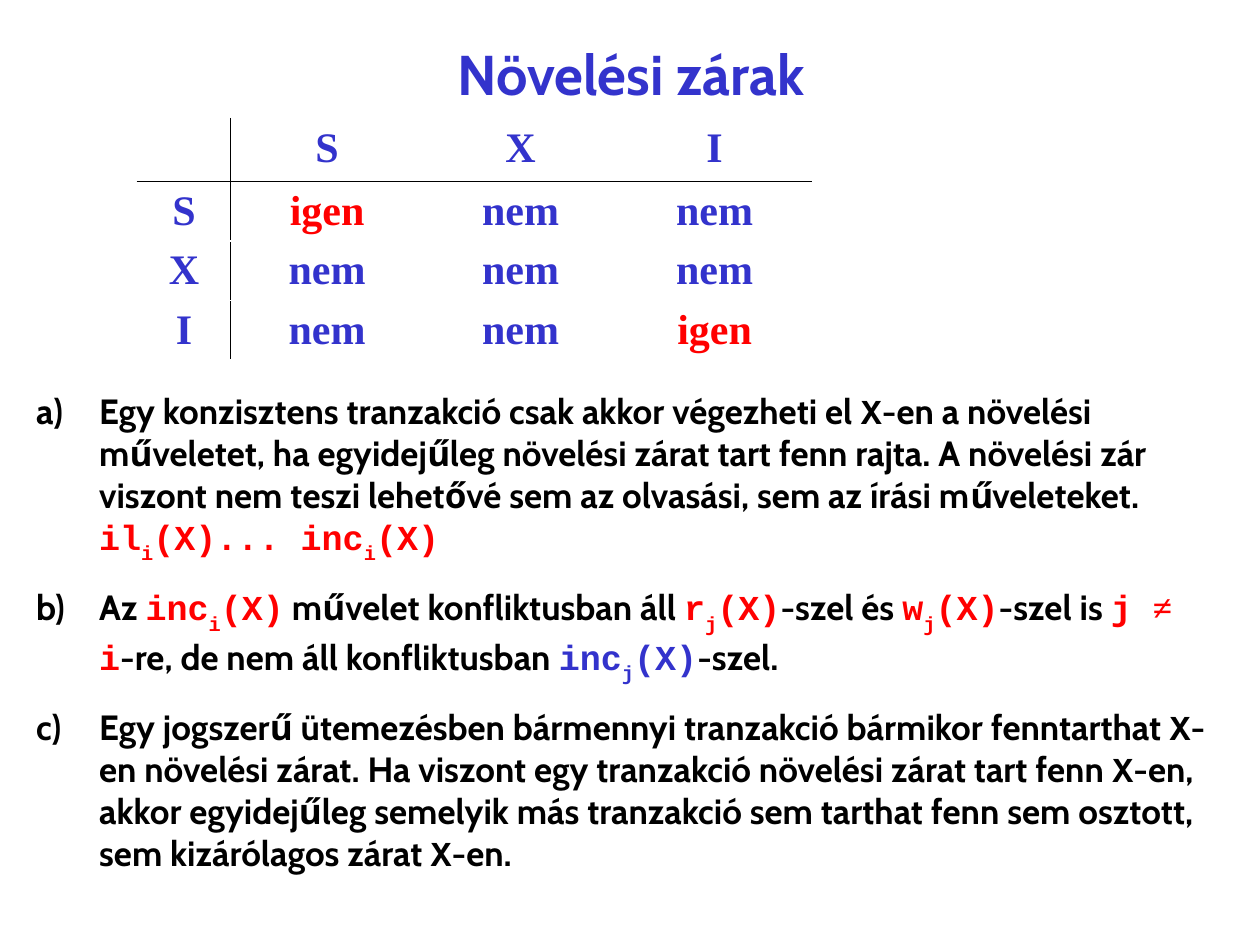
"""Build the slide on increment locks: a lock table and three rules."""
from lxml.etree import SubElement
from pptx import Presentation
from pptx.dml.color import RGBColor
from pptx.enum.text import MSO_ANCHOR, PP_ALIGN
from pptx.oxml.ns import qn
from pptx.util import Cm, Pt

BLUE, RED, BLACK = "3333CC", "FF0000", "000000"
SANS, MONO, SERIF = "Cabin", "Courier New", "Times New Roman"

TITLE = "Növelési zárak"
GRID = [
    ["", "S", "X", "I"],
    ["S", "igen", "nem", "nem"],
    ["X", "nem", "nem", "nem"],
    ["I", "nem", "nem", "igen"],
]
COLS = [1.88, 3.89, 3.91, 3.91]
ROWS = [1.27, 1.19, 1.19, 1.19]

LOOKS = {
    "text": (SANS, BLACK, 0),
    "item": (MONO, BLACK, 0),
    "code": (MONO, RED, 0),
    "sub": (MONO, RED, -30),
    "sign": (SERIF, RED, 0),
    "good": (MONO, BLUE, 0),
    "goodsub": (MONO, BLUE, -30),
}
RULES = [
    [
        ("text", "Egy konzisztens tranzakció csak akkor végezheti el "),
        ("item", "X"),
        ("text", "-en a növelési műveletet, ha egyidejűleg növelési zárat tart "
                 "fenn rajta. A növelési zár viszont nem teszi lehetővé sem az "
                 "olvasási, sem az írási műveleteket. "),
        ("code", "il"), ("sub", "i"), ("code", "(X)... inc"),
        ("sub", "i"), ("code", "(X)"),
    ],
    [
        ("text", "Az "),
        ("code", "inc"), ("sub", "i"), ("code", "(X)"),
        ("text", " művelet konfliktusban áll "),
        ("code", "r"), ("sub", "j"), ("code", "(X)"),
        ("text", "-szel és "),
        ("code", "w"), ("sub", "j"), ("code", "(X)"),
        ("text", "-szel is "),
        ("code", "j "), ("sign", "≠ "), ("code", "i"),
        ("text", "-re, de nem áll konfliktusban "),
        ("good", "inc"), ("goodsub", "j"), ("good", "(X)"),
        ("text", "-szel."),
    ],
    [
        ("text", "Egy jogszerű ütemezésben bármennyi tranzakció bármikor "
                 "fenntarthat "),
        ("item", "X"),
        ("text", "-en növelési zárat. Ha viszont egy tranzakció növelési zárat "
                 "tart fenn "),
        ("item", "X"),
        ("text", "-en, akkor egyidejűleg semelyik más tranzakció sem tarthat "
                 "fenn sem osztott, sem kizárólagos zárat "),
        ("item", "X"),
        ("text", "-en."),
    ],
]


def put(item, vals):
    for name, val in vals.items():
        setattr(item, name, val)


def tint(font, code):
    font.color.rgb = RGBColor.from_string(code)


def add_run(para, text, face, size, code, base=0):
    run = para.add_run()
    run.text = text
    put(run.font, {"name": face, "size": Pt(size), "bold": True})
    tint(run.font, code)
    if base:
        run.font._element.set("baseline", str(base * 1000))


def add_box(slide, left, top, width, height, anchor):
    box = slide.shapes.add_textbox(Cm(left), Cm(top), Cm(width), Cm(height))
    put(box.text_frame, {"word_wrap": True, "vertical_anchor": anchor})
    return box.text_frame


def add_edge(cell, side):
    line = SubElement(cell._tc.get_or_add_tcPr(), qn("a:ln" + side), w=str(Pt(1)))
    fill = SubElement(line, qn("a:solidFill"))
    SubElement(fill, qn("a:srgbClr"), val=BLACK)


def add_grid(slide):
    table = slide.shapes.add_table(
        len(ROWS), len(COLS), Cm(2.77), Cm(2.39), Cm(sum(COLS)), Cm(sum(ROWS))
    ).table
    put(table, {"first_row": False, "horz_banding": False})
    for col, width in zip(table.columns, COLS):
        col.width = Cm(width)
    for row, height in zip(table.rows, ROWS):
        row.height = Cm(height)
    for y, words in enumerate(GRID):
        for x, word in enumerate(words):
            cell = table.cell(y, x)
            edges = {"L": x == 1, "R": x == 0, "T": y == 1, "B": y == 0}
            for side, shown in edges.items():
                if shown:
                    add_edge(cell, side)
            cell.fill.background()
            put(cell, {"margin_top": Cm(0.13), "margin_bottom": Cm(0.05)})
            para = cell.text_frame.paragraphs[0]
            para.alignment = PP_ALIGN.CENTER
            if word:
                add_run(para, word, SERIF, 24, RED if word == "igen" else BLUE)


def add_rules(slide):
    frame = add_box(slide, 0.48, 7.72, 24.08, 10.41, MSO_ANCHOR.TOP)
    for num, rule in enumerate(RULES):
        para = frame.add_paragraph() if num else frame.paragraphs[0]
        para.space_before = Pt(12 if num else 0)
        props = para._p.get_or_add_pPr()
        props.set("marL", str(Cm(1.27)))
        props.set("indent", str(Cm(-1.27)))
        SubElement(props, qn("a:buFont"), typeface=SANS)
        SubElement(props, qn("a:buAutoNum"), type="alphaLcParenR")
        for look, text in rule:
            face, code, base = LOOKS[look]
            add_run(para, text, face, 20, code, base)


def main():
    deck = Presentation()
    put(deck, {"slide_width": Cm(25.4), "slide_height": Cm(19.05)})
    slide = deck.slides.add_slide(deck.slide_layouts[6])
    head = add_box(slide, 1.93, 0.94, 21.59, 1.07, MSO_ANCHOR.MIDDLE).paragraphs[0]
    head.alignment = PP_ALIGN.CENTER
    add_run(head, TITLE, SANS, 32, BLUE)
    add_grid(slide)
    add_rules(slide)
    deck.save("out.pptx")


if __name__ == "__main__":
    main()
